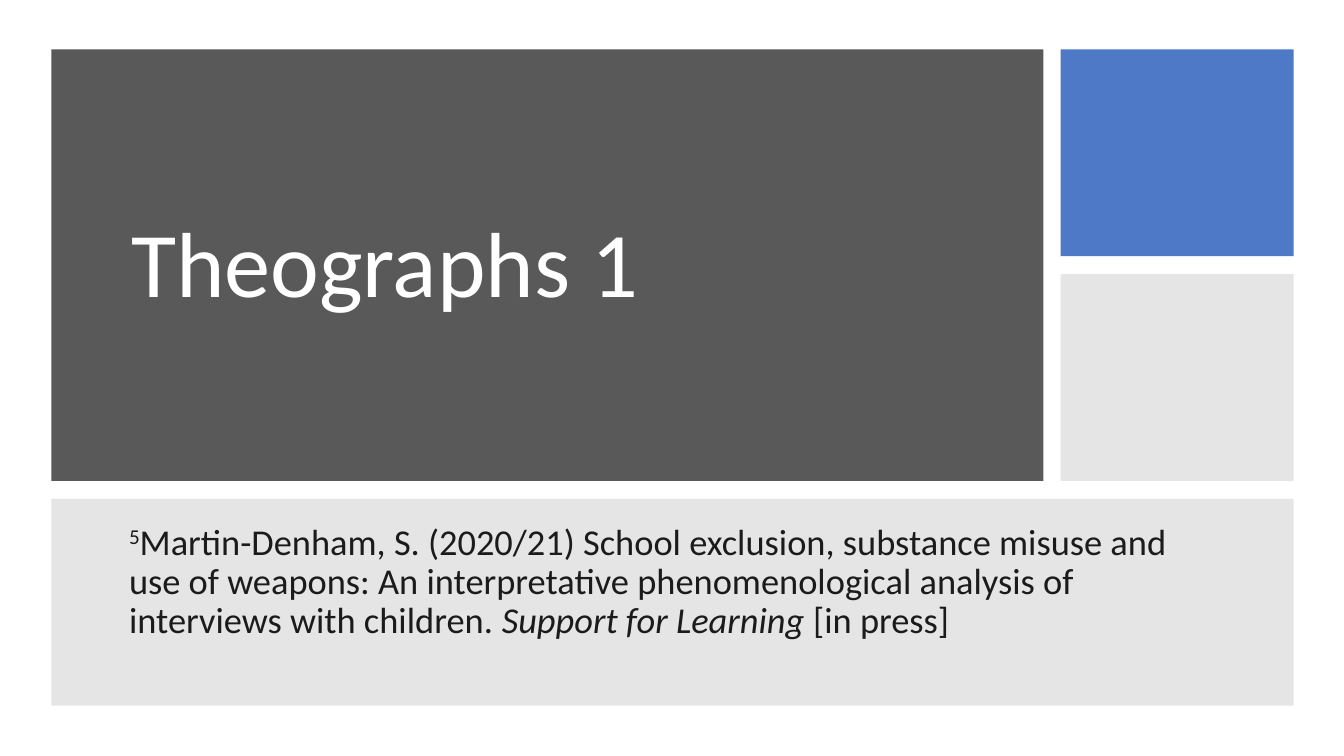
"""Build the Theographs title slide."""
from dataclasses import dataclass

from pptx import Presentation
from pptx.dml.color import RGBColor
from pptx.enum.shapes import MSO_SHAPE
from pptx.enum.text import MSO_ANCHOR, MSO_AUTO_SIZE, PP_ALIGN
from pptx.oxml.ns import qn
from pptx.util import Inches, Pt
from lxml import etree

RECT = MSO_SHAPE.RECTANGLE
MIDDLE = MSO_ANCHOR.MIDDLE
LEFT = PP_ALIGN.LEFT
FIXED = MSO_AUTO_SIZE.NONE


@dataclass(frozen=True)
class Theme:
    """Colours, font and type sizes."""
    font: str = "Calibri"
    dark: str = "595959"
    grey: str = "7F7F7F"
    blue: str = "4472C4"
    white: str = "FFFFFF"
    ink: str = "1B1B1B"
    head: int = 66
    text: int = 26


THEME = Theme()
TITLE = [("Theographs 1", {}, {})]
CITE = [
    ("5", {}, {"baseline": "30000"}),
    ("Martin-Denham, S. (2020/21) School exclusion, substance misuse and use of "
     "weapons: An interpretative phenomenological analysis of interviews with "
     "children. ", {}, {}),
    ("Support for Learning", {"italic": True}, {}),
    (" [in press]", {}, {}),
]
TILES = [
    {"row": 0, "rows": 2, "cols": (0, 0), "fill": THEME.dark, "alpha": 100},
    {"row": 1, "rows": 1, "cols": (1, 1), "fill": THEME.grey, "alpha": 20},
    {"row": 2, "rows": 1, "cols": (0, 1), "fill": THEME.grey, "alpha": 20},
    {"row": 0, "rows": 1, "cols": (1, 1), "fill": THEME.blue, "alpha": 95},
]
COLS = [(0.51, 10.35), (10.52, 12.83)]
TOP, PITCH, GAP = 0.49, 2.23, 0.18


def assign(target, values):
    """Set each attribute from a dict."""
    for name, value in values.items():
        setattr(target, name, value)


def add_tile(slide, tile):
    """Draw one panel of the grid."""
    first, last = tile["cols"]
    left, right = COLS[first][0], COLS[last][1]
    box = (left, TOP + tile["row"] * PITCH, right - left, tile["rows"] * PITCH - GAP)
    shape = slide.shapes.add_shape(RECT, *map(Inches, box))
    shape.shadow.inherit = False
    shape.line.fill.background()
    shape.fill.solid()
    shape.fill.fore_color.rgb = RGBColor.from_string(tile["fill"])
    if tile["alpha"] < 100:
        color = shape.fill._xPr.find(".//" + qn("a:srgbClr"))
        etree.SubElement(color, qn("a:alpha"), val=str(tile["alpha"] * 1000))


def fill_text(holder, box, runs, size, color, frame):
    """Place a placeholder and write its runs."""
    assign(holder, dict(zip(("left", "top", "width", "height"), map(Inches, box))))
    body = holder.text_frame
    assign(body, {"word_wrap": True, "auto_size": FIXED, "vertical_anchor": MIDDLE, **frame})
    para = body.paragraphs[0]
    assign(para, {"alignment": LEFT, "line_spacing": 0.9, "space_before": Pt(0)})
    for text, style, extra in runs:
        run = para.add_run()
        run.text = text
        base = {"name": THEME.font, "size": Pt(size), "bold": False}
        assign(run.font, {**base, **style})
        run.font.color.rgb = RGBColor.from_string(color)
        for key, value in {"cap": "none", **extra}.items():
            run.font._element.set(key, value)


def main():
    """Build and save the deck."""
    deck = Presentation()
    assign(deck, {"slide_width": Inches(13.33), "slide_height": Inches(7.5)})
    slide = deck.slides.add_slide(deck.slide_layouts[2])
    title, body = slide.placeholders
    for tile in TILES:
        add_tile(slide, tile)
    fill_text(title, (1.2, 1.22, 8.41, 2.87), TITLE, THEME.head, THEME.white, {})
    fill_text(body, (1.18, 5.3, 10.95, 1.35), CITE, THEME.text, THEME.ink,
              {"margin_bottom": Inches(0.44)})
    for holder in (title, body):
        slide.shapes._spTree.append(holder._element)
    deck.save("out.pptx")


if __name__ == "__main__":
    main()
